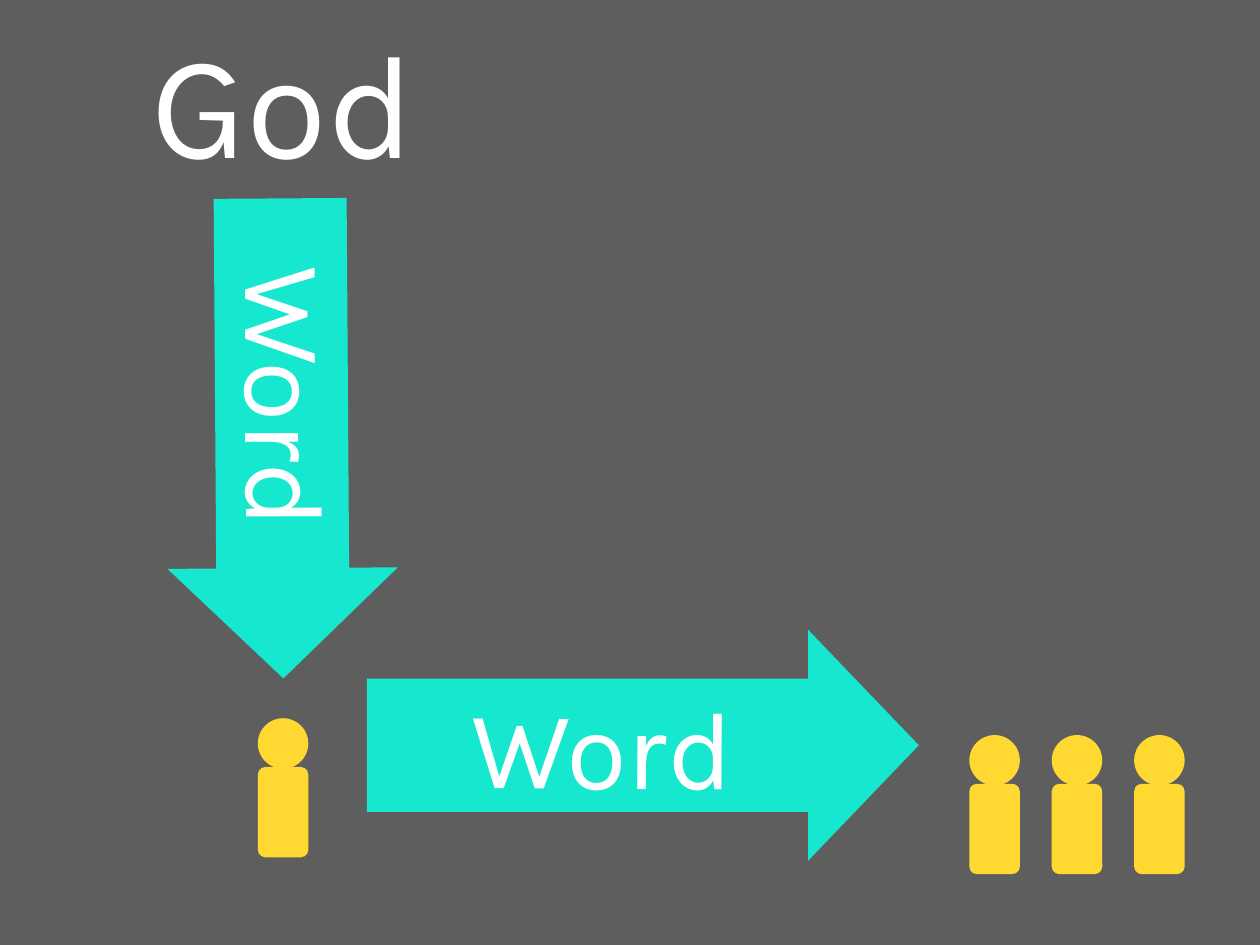
from pptx import Presentation
from pptx.dml.color import RGBColor
from pptx.enum.shapes import MSO_SHAPE
from pptx.enum.text import MSO_ANCHOR, MSO_AUTO_SIZE, PP_ALIGN
from pptx.util import Pt

# Content: lengths in px, 100 px to the inch
SCALE = 9144
SLIDE_SIZE = (1422, 1067)
GREY = RGBColor(0x5E, 0x5E, 0x5E)
TURQUOISE = RGBColor(0x16, 0xE7, 0xCF)
YELLOW = RGBColor(0xFF, 0xD9, 0x32)
WHITE = RGBColor(0xFF, 0xFF, 0xFF)
FONT = "Karla"

SPEAKER = ("God", (-26, -7, 691, 238))
# label, arrow box, arrow rotation, label box, label rotation
MESSAGES = [
    ("Word", (47, 365, 542, 260), 89.6, (-18, 358, 691, 181), 89.9),
    ("Word", (414, 711, 623, 261), 0, (334, 751, 691, 181), 0.3),
]
ARROW_PROPORTIONS = (0.577, 0.479)

# left, top and number of people
LISTENERS = [(291, 811, 1), (1094, 830, 3)]
PERSON_PITCH = 93
HEAD_SIZE = 57
BODY_DROP, BODY_HEIGHT = 55, 102
BODY_ROUNDING = 0.15


def emu(box):
    return [length * SCALE for length in box]


def add_solid(group, kind, box, color, adjustments=(), rotation=0):
    solid = group.shapes.add_shape(kind, *emu(box))
    solid.shadow.inherit = False
    solid.fill.solid()
    solid.fill.fore_color.rgb = color
    solid.line.fill.background()
    solid.rotation = rotation
    for index, value in enumerate(adjustments):
        solid.adjustments[index] = value


def write(holder, text, size, color=WHITE, margin=6):
    frame = holder.text_frame
    frame.word_wrap = True
    frame.auto_size = MSO_AUTO_SIZE.NONE
    frame.vertical_anchor = MSO_ANCHOR.MIDDLE
    frame.margin_left = frame.margin_right = margin * SCALE
    frame.margin_top = frame.margin_bottom = margin * SCALE
    paragraph = frame.paragraphs[0]
    paragraph.alignment = PP_ALIGN.CENTER
    run = paragraph.add_run()
    run.text = text
    run.font.name = FONT
    run.font.size = Pt(size)
    run.font.color.rgb = color


def main():
    presentation = Presentation()
    presentation.slide_width, presentation.slide_height = emu(SLIDE_SIZE)
    slide = presentation.slides.add_slide(presentation.slide_layouts[5])
    slide.background.fill.solid()
    slide.background.fill.fore_color.rgb = GREY

    # Speaker
    name, name_box = SPEAKER
    speaker = slide.shapes.title
    speaker.left, speaker.top, speaker.width, speaker.height = emu(name_box)
    write(speaker, name, size=120)

    # Labelled arrows
    for word, arrow_box, arrow_turn, word_box, word_turn in MESSAGES:
        message = slide.shapes.add_group_shape()
        add_solid(message, MSO_SHAPE.RIGHT_ARROW, arrow_box, TURQUOISE,
                  ARROW_PROPORTIONS, arrow_turn)
        label = message.shapes.add_textbox(*emu(word_box))
        label.rotation = word_turn
        write(label, word, size=90)

    # People
    for left, top, count in LISTENERS:
        people = slide.shapes.add_group_shape()
        for index in range(count):
            x = left + index * PERSON_PITCH
            add_solid(people, MSO_SHAPE.OVAL, (x, top, HEAD_SIZE, HEAD_SIZE), YELLOW)
            add_solid(people, MSO_SHAPE.ROUNDED_RECTANGLE,
                      (x, top + BODY_DROP, HEAD_SIZE, BODY_HEIGHT), YELLOW,
                      [BODY_ROUNDING])

    presentation.save("out.pptx")


if __name__ == "__main__":
    main()
